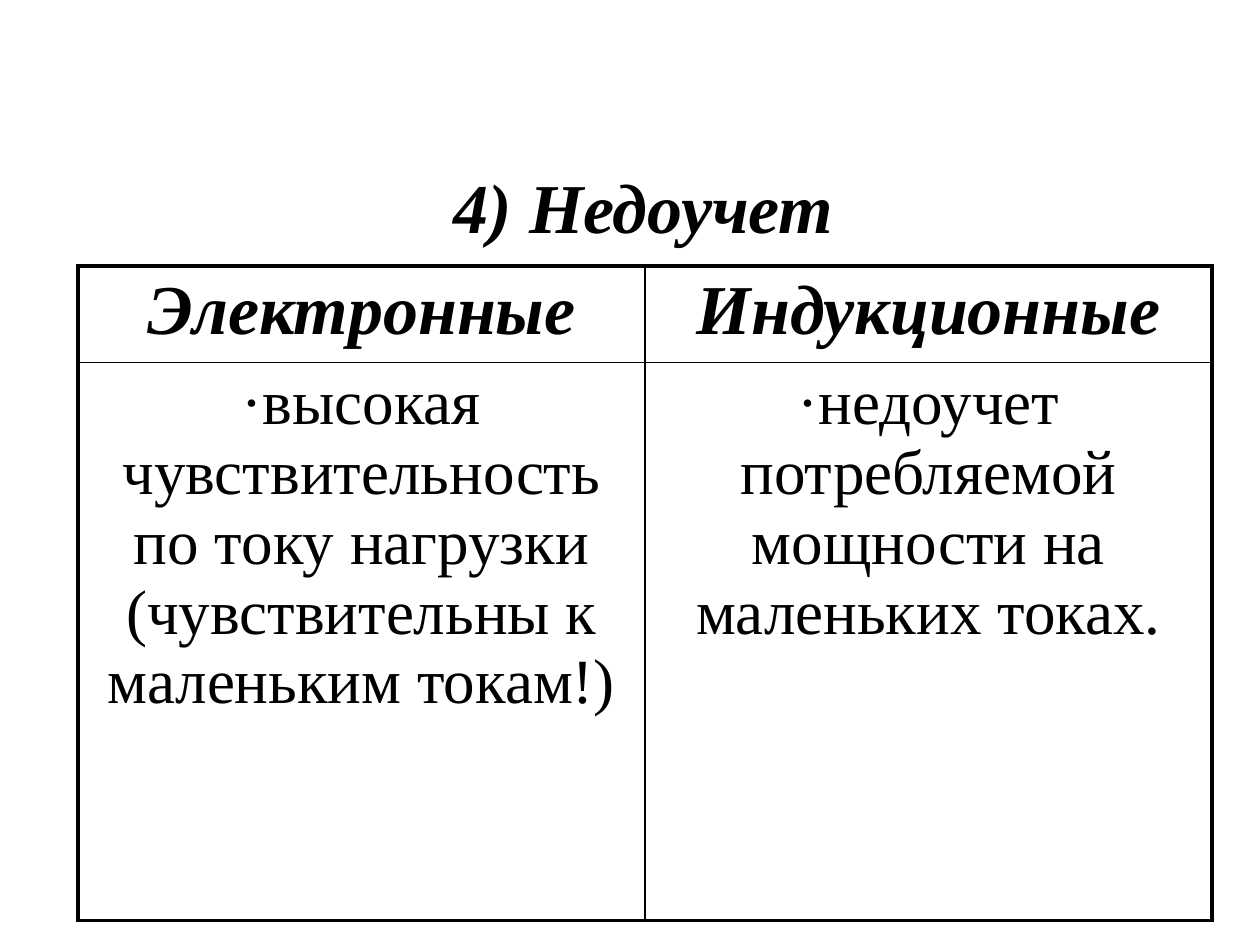
import pptx
import pptx.util
import pptx.dml.color
import pptx.enum.text
import pptx.oxml
import pptx.oxml.ns

PX = 914400 / 126  # EMU in one px
INK = "000000"
THIN, THICK = 1, 2.25
ROWS = [
    ["Электронные", "Индукционные"],
    ["·высокая чувствительность по току нагрузки (чувствительны к маленьким токам!)",
     "·недоучет потребляемой мощности на маленьких токах."],
]


def px(num):
    return pptx.util.Emu(round(num * PX))


def color(code):
    return pptx.dml.color.RGBColor.from_string(code)


def write(frame, text, size, strong):
    frame.word_wrap = True
    frame.text = text
    para = frame.paragraphs[0]
    para.alignment = pptx.enum.text.PP_ALIGN.CENTER
    font = para.runs[0].font
    font.name = "Times New Roman"
    font.size = pptx.util.Pt(size)
    font.bold = font.italic = strong
    font.color.rgb = color(INK)


def border(cell, sides):
    props = cell._tc.get_or_add_tcPr()
    space = pptx.oxml.ns.nsdecls("a")
    for spot, (side, width) in enumerate(sides.items()):
        line = pptx.oxml.parse_xml(
            f'<a:ln{side} {space} w="{pptx.util.Pt(width)}"><a:solidFill>'
            f'<a:srgbClr val="{INK}"/></a:solidFill></a:ln{side}>')
        props.insert(spot, line)


def title(slide, left, top, width, height):
    box = slide.shapes.add_textbox(px(left), px(top), px(width), px(height))
    write(box.text_frame, "4) Недоучет", 40, True)


def table(slide, left, top, width, head, body):
    count = len(ROWS[0])
    last = len(ROWS) - 1
    frame = slide.shapes.add_table(len(ROWS), count, px(left), px(top),
                                   px(width), px(head + body))
    grid = frame.table
    for col in grid.columns:
        col.width = px(width / count)
    for row, high in zip(grid.rows, (head, body)):
        row.height = px(high)
    for r, texts in enumerate(ROWS):
        for c, text in enumerate(texts):
            cell = grid.cell(r, c)
            cell.fill.background()
            write(cell.text_frame, text, 36 if r else 40, r == 0)
            # Thick outer frame, thin inner lines
            border(cell, {
                "L": THIN if c else THICK,
                "R": THICK if c == count - 1 else THIN,
                "T": THIN if r else THICK,
                "B": THICK if r == last else THIN,
            })


def main():
    deck = pptx.Presentation()
    deck.slide_width, deck.slide_height = px(1260), px(945)
    slide = deck.slides.add_slide(deck.slide_layouts[6])
    title(slide, 88, 157, 1111, 97)
    table(slide, 78, 266, 1134, 96, 558)
    deck.save("out.pptx")


if __name__ == "__main__":
    main()
